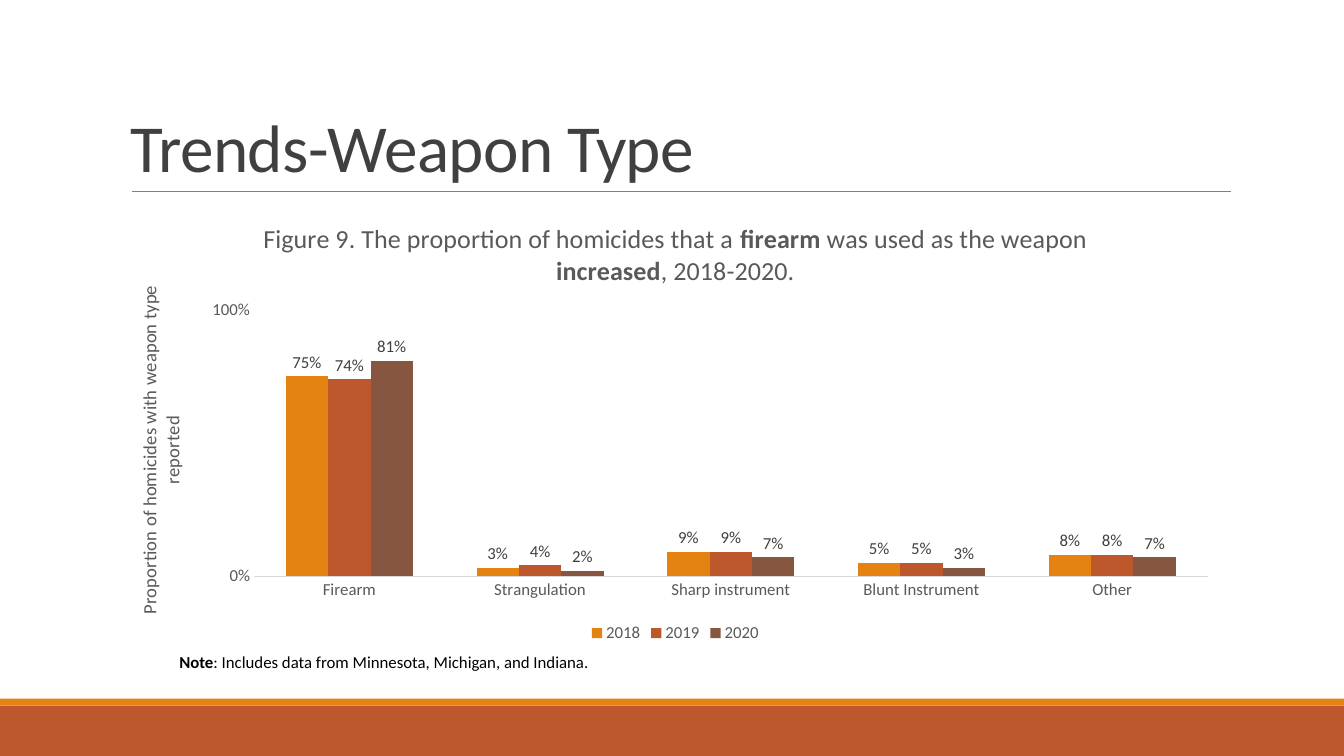
from lxml import etree
from pptx import Presentation
from pptx.chart.data import CategoryChartData
from pptx.dml.color import RGBColor
from pptx.enum.chart import (XL_CHART_TYPE as ChartType, XL_LABEL_POSITION as LabelPosition,
                             XL_LEGEND_POSITION as LegendPosition, XL_TICK_MARK as TickMark)
from pptx.enum.shapes import MSO_CONNECTOR as Connector, MSO_SHAPE as Shape
from pptx.enum.text import MSO_ANCHOR as Anchor
from pptx.oxml.ns import qn
from pptx.util import Inches, Pt

COLORS = {
    "orange": "E48312", "rust": "BD582C", "brown": "865640",
    "title": "404040", "muted": "595959", "note": "000000",
    "rule": "808080", "axis": "D9D9D9",
}
FONT = "Calibri"
WEAPONS = ["Firearm", "Strangulation", "Sharp instrument", "Blunt Instrument", "Other"]
YEARS = {
    "2018": ("orange", [0.75, 0.03, 0.09, 0.05, 0.08]),
    "2019": ("rust", [0.74, 0.04, 0.09, 0.05, 0.08]),
    "2020": ("brown", [0.81, 0.02, 0.07, 0.03, 0.07]),
}
FIGURE_TITLE = [("Figure 9. The proportion of homicides that a ", False), ("firearm", True),
                (" was used as the weapon ", False), ("increased", True),
                (", 2018-2020.", False)]
PLOT_AREA = {"x": 0.12, "y": 0.24, "w": 0.86, "h": 0.6}


def rgb(name):
    return RGBColor.from_string(COLORS[name])


class SlideBuilder:
    """Draws styled elements; positions and sizes are percentages of the slide."""

    def __init__(self, deck):
        self.deck = deck
        self.slide = deck.slides.add_slide(deck.slide_layouts[6])
        self.shapes = self.slide.shapes

    def frame(self, left, top, width, height):
        across, down = self.deck.slide_width / 100, self.deck.slide_height / 100
        return int(left * across), int(top * down), int(width * across), int(height * down)

    def style(self, font, size, color, bold=None):
        font.name, font.size, font.bold = FONT, Pt(size), bold
        font.color.rgb = rgb(color)

    def add_runs(self, paragraph, runs, size, color):
        self.style(paragraph.font, size, color, False)
        for words, bold in runs:
            run = paragraph.add_run()
            run.text = words
            if bold:
                run.font.bold = True

    def band(self, box, color):
        band = self.shapes.add_shape(Shape.RECTANGLE, *self.frame(*box))
        band.shadow.inherit = False
        band.fill.solid()
        band.fill.fore_color.rgb = rgb(color)
        band.line.fill.background()

    def rule(self, left, right, height, color):
        x, y, width, _ = self.frame(left, height, right - left, 0)
        rule = self.shapes.add_connector(Connector.STRAIGHT, x, y, x + width, y)
        rule.line.color.rgb = rgb(color)
        rule.line.width = Pt(0.5)
        etree.SubElement(rule.element.spPr, qn("a:effectLst"))

    def text(self, box, runs, size, color, anchor=Anchor.TOP, line_spacing=None, tracking=None):
        text_frame = self.shapes.add_textbox(*self.frame(*box)).text_frame
        text_frame.word_wrap = True
        text_frame.vertical_anchor = anchor
        paragraph = text_frame.paragraphs[0]
        paragraph.line_spacing = line_spacing
        self.add_runs(paragraph, runs, size, color)
        if tracking:
            for run in paragraph.runs:
                run._r.get_or_add_rPr().set("spc", str(int(tracking * 100)))

    def column_chart(self, box, categories, series, title, axis_title):
        data = CategoryChartData(number_format="0%")
        data.categories = categories
        for name, (_, values) in series.items():
            data.add_series(name, values)
        chart = self.shapes.add_chart(
            ChartType.COLUMN_CLUSTERED, *self.frame(*box), data).chart
        self.style(chart.font, 12, "muted")

        chart.has_title = True
        self.add_runs(chart.chart_title.text_frame.paragraphs[0], title, 18.6, "muted")
        chart.chart_title.include_in_layout = False
        chart.has_legend = True
        chart.legend.position = LegendPosition.BOTTOM
        chart.legend.include_in_layout = False
        self.style(chart.legend.font, 12, "muted")

        self.axes(chart, axis_title)
        plot = chart.plots[0]
        plot.gap_width, plot.overlap, plot.vary_by_categories = 150, 0, False
        for bars, (color, _) in zip(plot.series, series.values()):
            bars.format.fill.solid()
            bars.format.fill.fore_color.rgb = rgb(color)
            labels = bars.data_labels
            labels.show_value = True
            labels.position = LabelPosition.OUTSIDE_END
            labels.number_format, labels.number_format_is_linked = "0%", False
            self.style(labels.font, 12, "title")
        self.place_plot(chart)

    def axes(self, chart, axis_title):
        weapons, share = chart.category_axis, chart.value_axis
        for axis in (weapons, share):
            axis.major_tick_mark = axis.minor_tick_mark = TickMark.NONE
            axis.has_major_gridlines = False
            self.style(axis.tick_labels.font, 12, "muted")
        weapons.format.line.color.rgb = rgb("axis")
        weapons.format.line.width = Pt(0.75)
        share.format.line.fill.background()
        share.minimum_scale, share.maximum_scale, share.major_unit = 0, 1, 1
        share.tick_labels.number_format = "0%"
        share.tick_labels.number_format_is_linked = False
        share.has_title = True
        self.add_runs(share.axis_title.text_frame.paragraphs[0],
                      [(axis_title, False)], 13.3, "muted")

    def place_plot(self, chart):
        """Fix the inner plot area to PLOT_AREA, in shares of the chart."""
        plot_area = chart.element.find(".//" + qn("c:plotArea"))
        for old in plot_area.findall(qn("c:layout")):
            plot_area.remove(old)
        layout = etree.Element(qn("c:layout"))
        manual = etree.SubElement(layout, qn("c:manualLayout"))
        settings = {"layoutTarget": "inner", "xMode": "edge", "yMode": "edge", **PLOT_AREA}
        for tag, value in settings.items():
            etree.SubElement(manual, qn("c:" + tag)).set("val", str(value))
        plot_area.insert(0, layout)


def main():
    deck = Presentation()
    deck.slide_width, deck.slide_height = Inches(13.33), Inches(7.5)
    page = SlideBuilder(deck)
    page.band((0, 93.33, 100, 6.67), "rust")
    page.band((0, 92.4, 100, 0.93), "orange")
    page.rule(9.83, 91.6, 25.33, "rule")
    page.text((9, 4.13, 82.5, 21.2), [("Trends-Weapon Type", False)], 48, "title",
              anchor=Anchor.BOTTOM, line_spacing=0.85, tracking=-0.5)
    page.column_chart((9, 26.93, 82.5, 58.67), WEAPONS, YEARS, FIGURE_TITLE,
                      "Proportion of homicides with weapon type reported")
    page.text((12.6, 85.6, 76.9, 4),
              [("Note", True), (": Includes data from Minnesota, Michigan, and Indiana.", False)],
              12, "note")
    deck.save("out.pptx")


if __name__ == "__main__":
    main()
